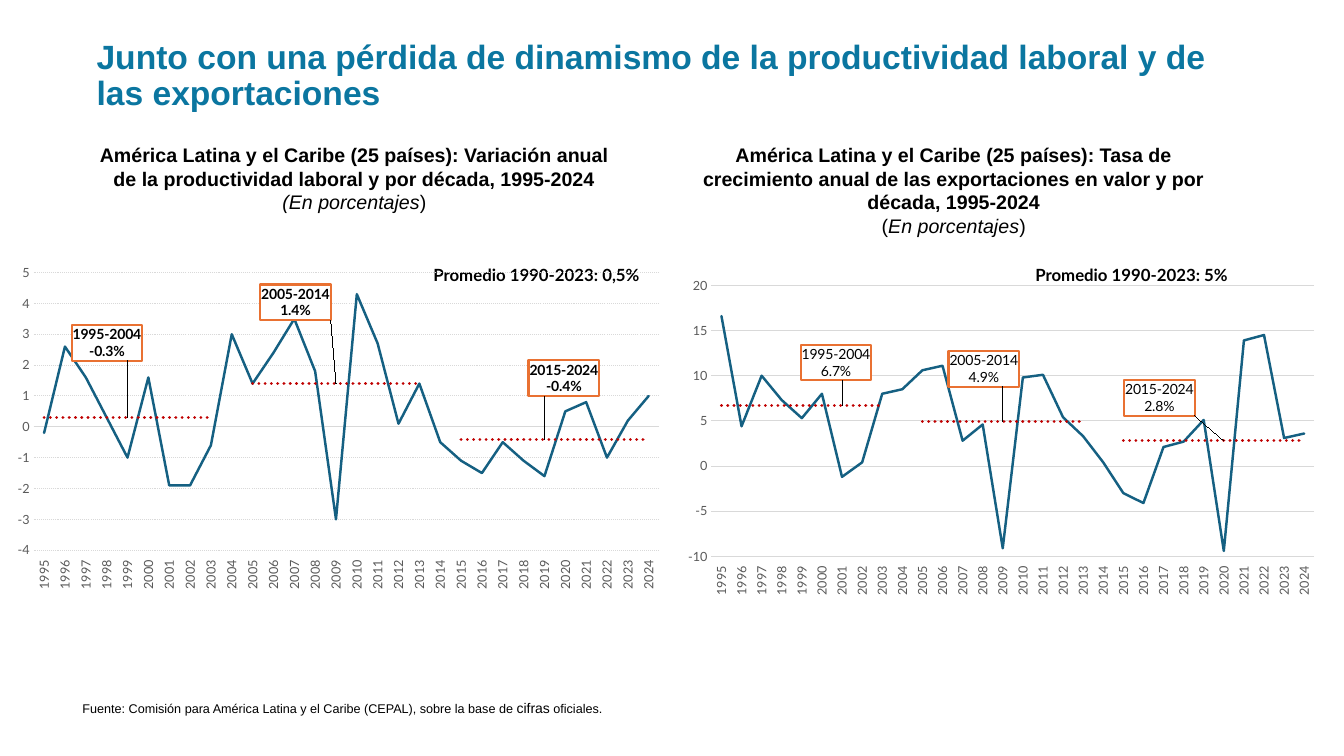
from lxml.etree import fromstring
from pptx import Presentation
from pptx.chart.data import CategoryChartData as Data
from pptx.dml.color import RGBColor as RGB
from pptx.enum.chart import XL_CHART_TYPE as Kind, XL_LABEL_POSITION as Pos
from pptx.enum.chart import XL_TICK_LABEL_POSITION as Tick, XL_TICK_MARK as Mark
from pptx.enum.dml import MSO_LINE as Dash
from pptx.enum.text import MSO_ANCHOR as Anchor, PP_ALIGN as Align
from pptx.util import Inches, Pt

NS = ('xmlns:c="http://schemas.openxmlformats.org/drawingml/2006/chart" '
      'xmlns:a="http://schemas.openxmlformats.org/drawingml/2006/main" '
      'xmlns:c15="http://schemas.microsoft.com/office/drawing/2012/chart"')
YEARS = range(1995, 2025)
SPANS = ("1995-2004", "2005-2014", "2015-2024")
LABOUR = [-0.2, 2.6, 1.6, 0.3, -1, 1.6, -1.9, -1.9, -0.6, 3, 1.4, 2.4, 3.5, 1.8, -3,
          4.3, 2.7, 0.1, 1.4, -0.5, -1.1, -1.5, -0.5, -1.1, -1.6, 0.5, 0.8, -1, 0.2, 1]
EXPORTS = [16.6, 4.4, 10, 7.3, 5.3, 8, -1.2, 0.4, 8, 8.5, 10.6, 11.1, 2.8, 4.6, -9.1,
           9.8, 10.1, 5.4, 3.3, 0.4, -3, -4.1, 2.1, 2.7, 5.1, -9.4, 13.9, 14.5, 3.1, 3.6]


def hue(code):
    """Turn a hex string into a colour."""
    return RGB.from_string(code)


def style(font, size, face, code="000000", bold=False, ital=False):
    """Set the look of a font."""
    font.size, font.name, font.bold, font.italic = Pt(size), face, bold, ital
    font.color.rgb = hue(code)


def text(slide, box, paras, size, face="Arial", code="000000", align=Align.LEFT):
    """Add a text box whose paragraphs are lists of (words, marks) runs."""
    frame = slide.shapes.add_textbox(*map(Inches, box)).text_frame
    frame.word_wrap = True
    for i, runs in enumerate(paras):
        para = frame.paragraphs[0] if i == 0 else frame.add_paragraph()
        para.alignment = align
        for words, marks in runs:
            run = para.add_run()
            run.text = words
            style(run.font, size, face, code, "b" in marks, "i" in marks)
    return frame


def layout(spot, inner=""):
    """Build a manual layout from a dict of fractions."""
    parts = "".join(f'<c:{key} val="{val}"/>' for key, val in spot.items())
    return fromstring(f"<c:layout {NS}><c:manualLayout>{inner}{parts}"
                      "</c:manualLayout></c:layout>")


def stroke(line, code, width, dash=None):
    """Set the colour, width and dash of a line."""
    line.color.rgb, line.width = hue(code), Pt(width)
    if dash:
        line.dash_style = dash


def axes(chart, low, high, step, fmt, dash):
    """Style both axes of a chart."""
    cat, val = chart.category_axis, chart.value_axis
    for axis in (cat, val):
        axis.major_tick_mark = axis.minor_tick_mark = Mark.NONE
        style(axis.tick_labels.font, 9, "Lato", "595959")
    cat.tick_label_position = Tick.LOW
    cat.has_major_gridlines = False
    stroke(cat.format.line, "D9D9D9", 0.75)
    cat._element.xpath("c:txPr/a:bodyPr")[0].set("rot", "-5400000")
    val.minimum_scale, val.maximum_scale, val.major_unit = low, high, step
    val.tick_labels.number_format = fmt
    val.tick_labels.number_format_is_linked = False
    val.format.line.fill.background()
    stroke(val.major_gridlines.format.line, "D9D9D9", 0.75, dash)


def callout(series, idx, lines, shift, bold):
    """Label one point with a framed box moved off its place."""
    label = series.points[idx].data_label
    frame = label.text_frame
    for i, words in enumerate(lines):
        para = frame.paragraphs[0] if i == 0 else frame.add_paragraph()
        run = para.add_run()
        run.text = words
        style(run.font, 10, "Lato", bold=bold)
    label.position = Pos.RIGHT
    node = series._element.xpath(f"c:dLbls/c:dLbl[c:idx/@val='{idx}']")[0]
    node.xpath("c:idx")[0].addnext(layout(dict(zip("xy", shift))))
    node.xpath("c:tx")[0].addnext(fromstring(
        f'<c:spPr {NS}><a:solidFill><a:srgbClr val="FFFFFF"/></a:solidFill>'
        '<a:ln w="19050"><a:solidFill><a:srgbClr val="E97132"/></a:solidFill></a:ln></c:spPr>'))


def leaders(series):
    """Draw leader lines from the labels to their points."""
    series.data_labels.show_value = False
    series._element.xpath("c:dLbls")[0].append(fromstring(
        f'<c:extLst {NS}><c:ext uri="{{CE6537A1-D6FC-4f65-9D91-7224C49458BB}}">'
        '<c15:showLeaderLines val="1"/><c15:leaderLines><c:spPr><a:ln w="9525"><a:solidFill>'
        '<a:srgbClr val="000000"/></a:solidFill></a:ln></c:spPr></c15:leaderLines>'
        '</c:ext></c:extLst>'))


def graph(slide, box, vals, means, plot, scale, notes, bold):
    """Add a line chart with dotted averages for each decade."""
    data = Data()
    data.categories = [str(year) for year in YEARS]
    data.add_series("Series 1", vals)
    first, second, third = means
    data.add_series("Series 2", [first] * 9 + [None] + [second] * 9 + [None] + [third] * 10)
    chart = slide.shapes.add_chart(Kind.LINE, *map(Inches, box), data).chart
    chart.has_legend = chart.has_title = False
    style(chart.font, 10, "Lato")
    chart.plots[0].vary_by_categories = False
    axes(chart, *scale)
    trend, mean = chart.plots[0].series
    stroke(trend.format.line, "156082", 1.75)
    stroke(mean.format.line, "C00000", 2.25, Dash.ROUND_DOT)
    for series in (trend, mean):
        series.smooth = False
        series._element.xpath("c:spPr/a:ln")[0].set("cap", "rnd")
    for span, (idx, rate, *shift) in zip(SPANS, notes):
        callout(mean, idx, (span, rate), shift, bold)
    leaders(mean)
    area = chart._chartSpace.xpath("c:chart/c:plotArea")[0]
    for old in area.xpath("c:layout"):
        area.remove(old)
    modes = '<c:layoutTarget val="inner"/><c:xMode val="edge"/><c:yMode val="edge"/>'
    area.insert(0, layout(dict(zip("xywh", plot)), modes))


def main():
    """Build and save the slide."""
    deck = Presentation()
    deck.slide_width, deck.slide_height = Inches(13.33), Inches(7.5)
    slide = deck.slides.add_slide(deck.slide_layouts[6])
    title = text(slide, (0.86, 0.36, 11.43, 0.8), [[(
        "Junto con una pérdida de dinamismo de la productividad laboral y de las exportaciones",
        "b")]], 24, code="0B76A0")
    title.vertical_anchor = Anchor.MIDDLE
    title.paragraphs[0].line_spacing = 0.9
    text(slide, (6.63, 1.37, 5.66, 1.04), [
        [("América Latina y el Caribe (25 países): Tasa de crecimiento anual de las "
          "exportaciones en valor y por década, 1995-2024", "b")],
        [("(", ""), ("En porcentajes", "i"), (")", "")]], 14, align=Align.CENTER)
    text(slide, (0.86, 1.37, 5.31, 0.81), [
        [("América Latina y el Caribe (25 países): Variación anual de la productividad "
          "laboral y por década, 1995-2024", "b")],
        [("(En porcentajes", "i"), (")", "")]], 14, align=Align.CENTER)
    source = text(slide, (0.72, 6.89, 11.44, 0.27), [[
        ("Fuente: Comisión para América Latina y el Caribe (CEPAL), sobre la base de ", ""),
        ("cifras", ""), (" oficiales.", "")]], 9)
    source.paragraphs[0].runs[1].font.size = Pt(10)
    for left, rate in ((4.2, "0,5%"), (10.17, "5%")):
        text(slide, (left, 2.58, 2.27, 0.3), [[(f"Promedio 1990-2023: {rate}", "b")]], 12, "Lato")
    graph(slide, (6.67, 2.7, 6.43, 3.28), EXPORTS, (6.7, 4.9, 2.8),
          (0.06, 0.04, 0.93, 0.82), (-10, 20, 5, "0", None),
          ((6, "6.7%", -0.07, -0.13), (14, "4.9%", -0.09, -0.16),
           (25, "2.8%", -0.16, -0.13)), False)
    graph(slide, (0.07, 2.57, 6.6, 3.36), LABOUR, (0.3, 1.4, -0.4),
          (0.04, 0.04, 0.94, 0.82), (-4, 5, 1, "General", Dash.ROUND_DOT),
          ((4, "-0.3%", -0.09, -0.22), (14, "1.4%", -0.12, -0.24),
           (24, "-0.4%", -0.03, -0.18)), True)
    deck.save("out.pptx")


if __name__ == "__main__":
    main()
